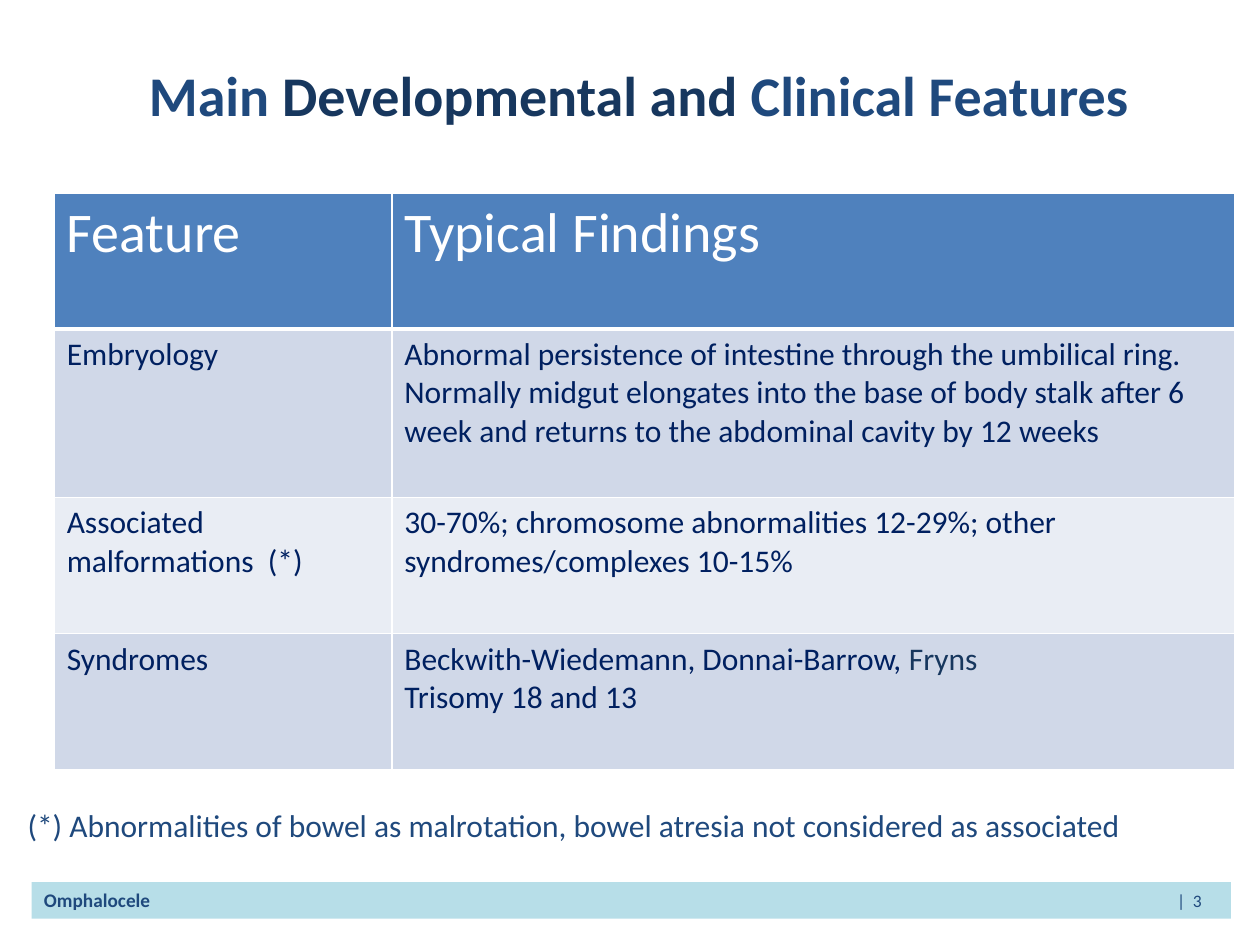
from dataclasses import dataclass

from lxml import etree
from pptx import Presentation
from pptx import util as u
from pptx.dml.color import RGBColor
from pptx.enum import shapes, text
from pptx.oxml import ns

NAVY, DEEP, BLUE, WHITE = "002060", "17375E", "1F497D", "FFFFFF"
HEAD, BAND, PALE, BAR = "4F81BD", "D0D8E8", "E9EDF4", "B7DEE8"


@dataclass
class Run:
    text: str
    size: float = 18
    color: str = NAVY
    bold: bool = False


@dataclass
class Row:
    high: float
    fill: str
    edge: float
    cells: list[list[list[Run]]]


def rgb(code: str) -> RGBColor:
    return RGBColor.from_string(code)


def paint(item, code: str) -> None:
    item.fill.solid()
    item.fill.fore_color.rgb = rgb(code)


def write(frame, paras: list[list[Run]]) -> None:
    for i, runs in enumerate(paras):
        para = frame.add_paragraph() if i else frame.paragraphs[0]
        for run in runs:
            part = para.add_run()
            part.text = run.text
            font = part.font
            font.name, font.size, font.bold = "Calibri", u.Pt(run.size), run.bold
            font.color.rgb = rgb(run.color)


def label(slide, spot: tuple, runs: list[Run], wrap: bool):
    frame = slide.shapes.add_textbox(*map(u.Inches, spot)).text_frame
    frame.word_wrap = wrap
    write(frame, [runs])
    return frame


def edge(cell, base: float) -> None:
    props = cell._tc.get_or_add_tcPr()
    for side in "LRTB":
        wide = base if side == "B" else 1
        line = etree.SubElement(props, ns.qn(f"a:ln{side}"), w=str(u.Pt(wide)))
        fill = etree.SubElement(line, ns.qn("a:solidFill"))
        etree.SubElement(fill, ns.qn("a:srgbClr"), val=WHITE)


def grid(slide, spot: tuple, wides: list[float], rows: list[Row]) -> None:
    table = slide.shapes.add_table(len(rows), len(wides), *map(u.Inches, spot)).table
    for col, wide in zip(table.columns, wides):
        col.width = u.Inches(wide)
    for r, row in enumerate(rows):
        table.rows[r].height = u.Inches(row.high)
        for c, paras in enumerate(row.cells):
            cell = table.cell(r, c)
            edge(cell, row.edge)
            paint(cell, row.fill)
            write(cell.text_frame, paras)


def footer(slide, spot: tuple, runs: list[Run], stop: float) -> None:
    bar = slide.shapes.add_shape(shapes.MSO_SHAPE.RECTANGLE, *map(u.Inches, spot))
    bar.shadow.inherit = False
    paint(bar, BAR)
    bar.line.fill.background()
    write(bar.text_frame, [runs])
    para = bar.text_frame.paragraphs[0]
    para.alignment = text.PP_ALIGN.LEFT
    tabs = etree.SubElement(para._p.get_or_add_pPr(), ns.qn("a:tabLst"))
    etree.SubElement(tabs, ns.qn("a:tab"), pos=str(u.Inches(stop)), algn="r")


ROWS = [
    Row(1.08, HEAD, 3, [
        [[Run("Feature", 32, WHITE)]],
        [[Run("Typical Findings", 32, WHITE)]],
    ]),
    Row(1.34, BAND, 1, [
        [[Run("Embryology")]],
        [[Run("Abnormal persistence of intestine through the umbilical ring. "
              "Normally midgut elongates into the base of body stalk after 6 "
              "week and returns to the abdominal cavity by 12 weeks")]],
    ]),
    Row(1.08, PALE, 1, [
        [[Run("Associated malformations  (*)")]],
        [[Run("30-70%; chromosome abnormalities 12-29%; other "
              "syndromes/complexes 10-15%")]],
    ]),
    Row(1.08, BAND, 1, [
        [[Run("Syndromes")]],
        [[Run("Beckwith-Wiedemann, Donnai-Barrow, "), Run("Fryns", color=DEEP)],
         [Run("Trisomy 18 and 13")]],
    ]),
]


def main() -> None:
    deck = Presentation()
    deck.slide_width, deck.slide_height = u.Inches(10), u.Inches(7.5)
    slide = deck.slides.add_slide(deck.slide_layouts[6])

    footer(slide, (0.25, 7, 9.52, 0.29),
           [Run("Omphalocele\t", 11, BLUE, True), Run("|  3", 10, BLUE)], 9.19)

    title = label(slide, (0.57, 0.44, 9, 0.62), [
        Run("Main ", 32, BLUE, True),
        Run("Developmental and ", 32, DEEP, True),
        Run("Clinical Features", 32, BLUE, True),
    ], True)
    title.vertical_anchor = text.MSO_ANCHOR.BOTTOM
    title.paragraphs[0].alignment = text.PP_ALIGN.CENTER
    title.paragraphs[0].line_spacing = u.Pt(30)

    grid(slide, (0.43, 1.53, 9.37, 4.58), [2.68, 6.69], ROWS)

    label(slide, (0.12, 6.35, 8.98, 0.4), [
        Run("(*) Abnormalities of bowel as malrotation, bowel atresia "
            "not considered as associated", color=BLUE),
    ], False)

    deck.save("out.pptx")


if __name__ == "__main__":
    main()
